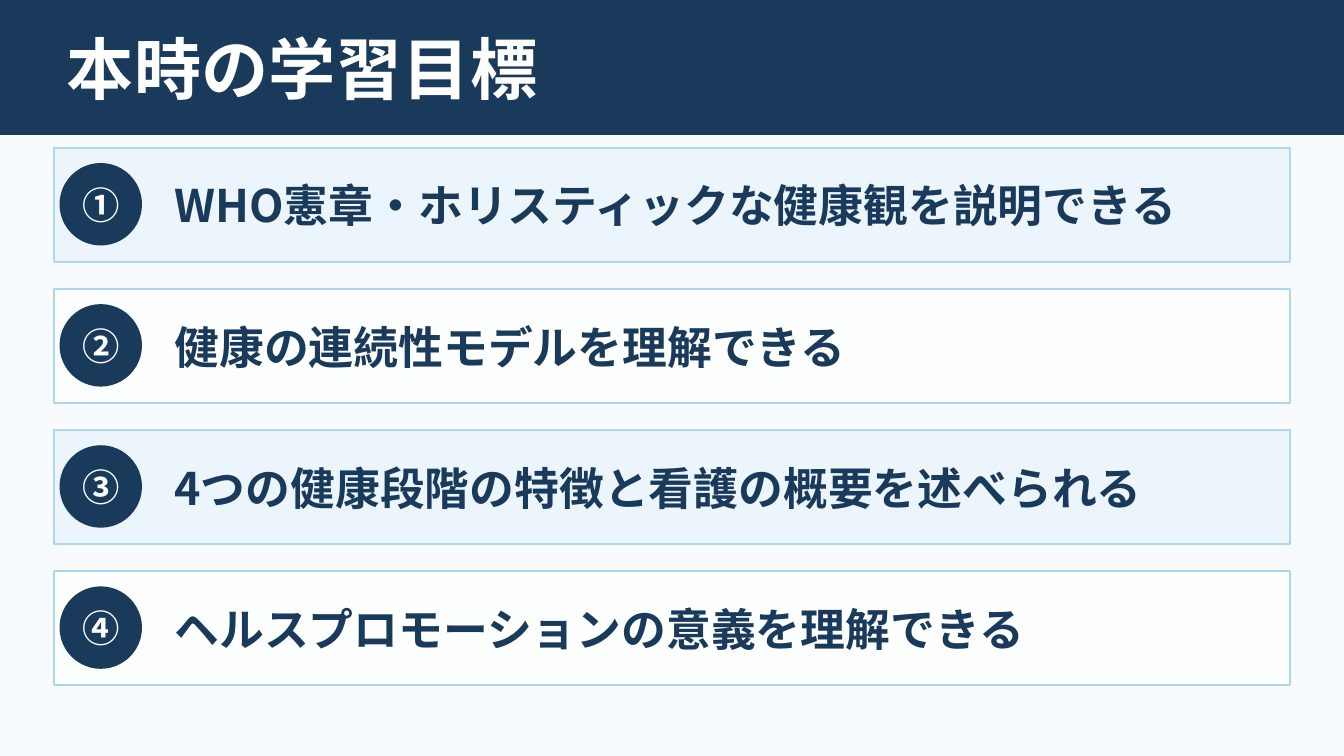
from dataclasses import dataclass

import pptx
import pptx.dml.color
import pptx.enum.shapes
import pptx.enum.text
import pptx.oxml.ns
import pptx.util
from lxml import etree

Pt = pptx.util.Pt
RGB = pptx.dml.color.RGBColor.from_string
Shape = pptx.enum.shapes.MSO_SHAPE
Align = pptx.enum.text.PP_ALIGN


@dataclass(frozen=True)
class Theme:
    font: str = "Noto Sans CJK JP"
    background: str = "F8FBFD"
    navy: str = "1A3A5C"
    white: str = "FFFFFF"
    border: str = "AED6F1"
    row_fills: tuple = ("EBF5FB", "FDFEFE")
    title_size: int = 36
    goal_size: int = 24
    number_size: int = 20


THEME = Theme()
GOALS = [
    ("①", "WHO憲章・ホリスティックな健康観を説明できる"),
    ("②", "健康の連続性モデルを理解できる"),
    ("③", "4つの健康段階の特徴と看護の概要を述べられる"),
    ("④", "ヘルスプロモーションの意義を理解できる"),
]


def add_panel(slide, kind, box, fill, line):
    panel = slide.shapes.add_shape(kind, *map(Pt, box))
    panel.shadow.inherit = False
    panel.fill.solid()
    panel.fill.fore_color.rgb = RGB(fill)
    panel.line.color.rgb = RGB(line)
    panel.line.width = Pt(1)
    return panel


def write(frame, text, size, color, align=Align.LEFT):
    """Set one bold, vertically centred line, with Latin and East Asian fonts alike."""
    frame.word_wrap = True
    frame.vertical_anchor = pptx.enum.text.MSO_ANCHOR.MIDDLE
    paragraph = frame.paragraphs[0]
    paragraph.alignment = align
    run = paragraph.add_run()
    run.text = text
    run.font.size = Pt(size)
    run.font.bold = True
    run.font.color.rgb = RGB(color)
    run.font.name = THEME.font
    east_asian = etree.SubElement(run.font._element, pptx.oxml.ns.qn("a:ea"))
    east_asian.set("typeface", THEME.font)


def add_label(slide, box, text, size, color):
    label = slide.shapes.add_textbox(*map(Pt, box))
    write(label.text_frame, text, size, color)


def add_header(slide, box, title):
    left, top, width, height = box
    add_panel(slide, Shape.RECTANGLE, box, THEME.navy, THEME.navy)
    title_box = (left + 28.8, top + 10.8, width - 72, height - 21.6)
    add_label(slide, title_box, title, THEME.title_size, THEME.white)


def add_goal(slide, box, number, goal, fill):
    left, top, width, height = box
    add_panel(slide, Shape.RECTANGLE, box, fill, THEME.border)

    badge_box = (left + 3.6, top + 8.64, 43.2, 43.2)
    badge = add_panel(slide, Shape.OVAL, badge_box, THEME.navy, THEME.navy)
    frame = badge.text_frame
    frame.margin_left = frame.margin_right = frame.margin_top = frame.margin_bottom = 0
    write(frame, number, THEME.number_size, THEME.white, Align.CENTER)

    goal_box = (left + 57.6, top + 10.8, width - 72, height - 21.6)
    add_label(slide, goal_box, goal, THEME.goal_size, THEME.navy)


def add_goal_list(slide, box, goals, gap):
    left, top, width, height = box
    row_height = (height - gap * (len(goals) - 1)) / len(goals)
    for index, (number, goal) in enumerate(goals):
        row_box = (left, top + index * (row_height + gap), width, row_height)
        fill = THEME.row_fills[index % len(THEME.row_fills)]
        add_goal(slide, row_box, number, goal, fill)


def main():
    presentation = pptx.Presentation()
    presentation.slide_width = Pt(720)
    presentation.slide_height = Pt(405)
    slide = presentation.slides.add_slide(presentation.slide_layouts[6])
    slide.background.fill.solid()
    slide.background.fill.fore_color.rgb = RGB(THEME.background)

    add_header(slide, (0, 0, 720, 72), "本時の学習目標")
    add_goal_list(slide, (28.8, 79.2, 662.4, 288), GOALS, gap=14.4)
    presentation.save("out.pptx")


if __name__ == "__main__":
    main()
